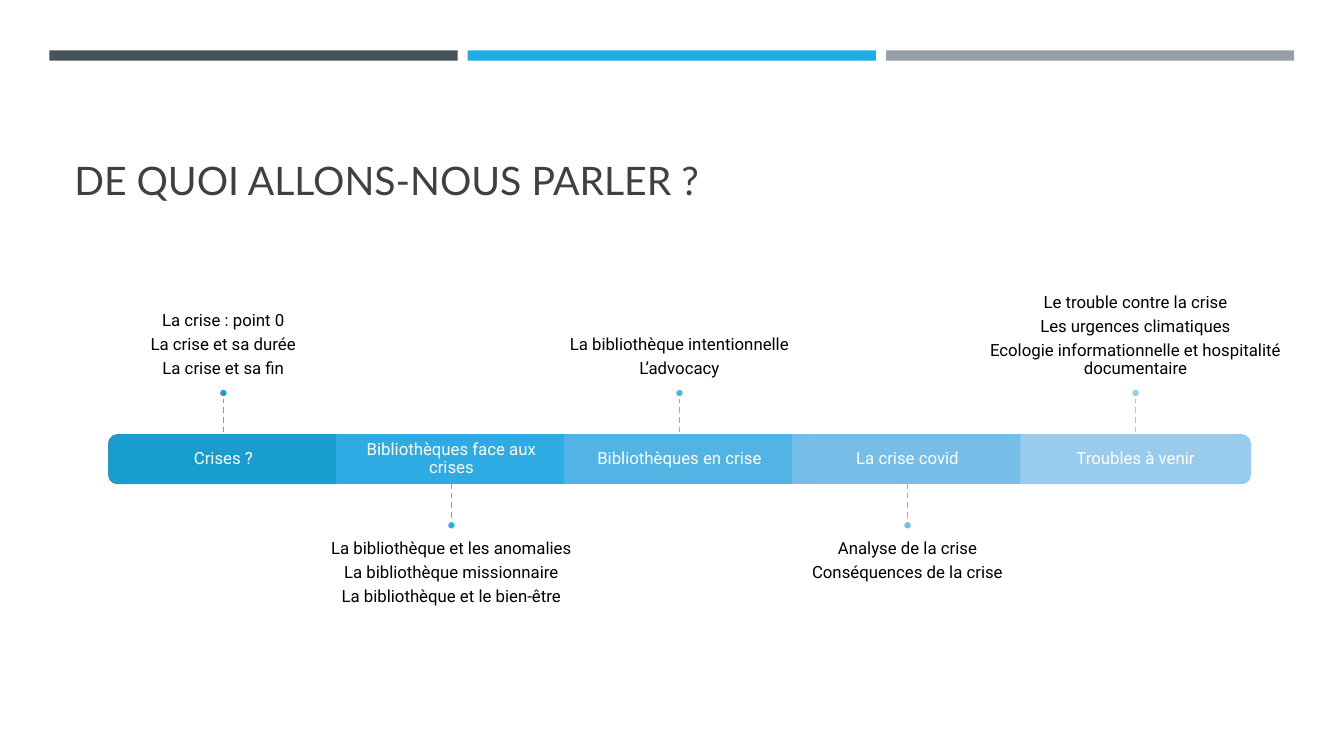
from dataclasses import dataclass

from lxml import etree
from pptx import Presentation
from pptx.dml.color import RGBColor
from pptx.enum.dml import MSO_LINE
from pptx.enum.shapes import MSO_CONNECTOR, MSO_SHAPE
from pptx.enum.text import MSO_ANCHOR, PP_ALIGN
from pptx.oxml.ns import qn
from pptx.util import Pt

RECT, OVAL = MSO_SHAPE.RECTANGLE, MSO_SHAPE.OVAL
ROUND_END = MSO_SHAPE.ROUND_2_SAME_RECTANGLE
STRAIGHT, DASH = MSO_CONNECTOR.STRAIGHT, MSO_LINE.DASH
TOP, MIDDLE, BOTTOM = MSO_ANCHOR.TOP, MSO_ANCHOR.MIDDLE, MSO_ANCHOR.BOTTOM
LEFT, CENTER = PP_ALIGN.LEFT, PP_ALIGN.CENTER


@dataclass(frozen=True)
class Theme:
    heading_font: str = "Lato"
    body_font: str = "Roboto"
    heading_size: float = 28
    body_size: float = 12
    heading: str = "404040"
    body: str = "000000"
    white: str = "FFFFFF"
    header_bars: tuple = ("465359", "1CADE4", "969FA7")
    segments: tuple = ("199DCF", "2DABE2", "52B3E5", "76BEE8", "99CBEC")
    stems: tuple = ("36B3E9", "48B8EC", "5ABEEF", "77BFE9", "98CBEC")


CHAPTERS = [
    ("Crises ?",
     ["La crise : point 0", "La crise et sa durée", "La crise et sa fin"]),
    ("Bibliothèques face aux crises",
     ["La bibliothèque et les anomalies", "La bibliothèque missionnaire",
      "La bibliothèque et le bien-être"]),
    ("Bibliothèques en crise",
     ["La bibliothèque intentionnelle", "L’advocacy"]),
    ("La crise covid",
     ["Analyse de la crise", "Conséquences de la crise"]),
    ("Troubles à venir",
     ["Le trouble contre la crise", "Les urgences climatiques",
      "Ecologie informationnelle et hospitalité documentaire"]),
]

BAR_LEFT, BAR_TOP, BAR_WIDTH, BAR_HEIGHT, BAR_STEP = 35.3, 36, 291.6, 7.4, 298.8
BAND_LEFT, BAND_TOP, BAND_HEIGHT, SEGMENT = 78.1, 311, 34, 162.9
STEM, DOT = 27, 6.5
TOPICS_WIDTH, TOPICS_HEIGHT = 271.4, 118
INSET = 7.2


class SlideBuilder:
    def __init__(self, slide, theme):
        self.shapes = slide.shapes
        self.theme = theme

    def block(self, kind, box, fill, outline=None, rotation=0):
        block = self.shapes.add_shape(kind, *map(Pt, box))
        block.shadow.inherit = False
        block.rotation = rotation
        block.fill.solid()
        block.fill.fore_color.rgb = RGBColor.from_string(fill)
        if outline:
            block.line.color.rgb = RGBColor.from_string(outline)
            block.line.width = Pt(1.75)
        else:
            block.line.fill.background()

    def stem(self, x, start, end, color):
        stem = self.shapes.add_connector(STRAIGHT, Pt(x), Pt(start), Pt(x), Pt(end))
        stem.line.color.rgb = RGBColor.from_string(color)
        stem.line.width = Pt(1)
        stem.line.dash_style = DASH
        properties = stem._element.find(qn("p:spPr"))
        etree.SubElement(properties, qn("a:effectLst"))

    def text(self, box, lines, color, anchor, insets, font=None, paragraph=None):
        """Insets run left, top, right, bottom; font and paragraph override body style."""
        frame = self.shapes.add_textbox(*map(Pt, box)).text_frame
        sides = ("margin_left", "margin_top", "margin_right", "margin_bottom")
        frame_format = {"word_wrap": True, "vertical_anchor": anchor,
                        **dict(zip(sides, map(Pt, insets)))}
        apply_format(frame, frame_format)
        frame.text = "\n".join(lines)
        font_format = {"name": self.theme.body_font, "size": Pt(self.theme.body_size),
                       **(font or {})}
        paragraph_format = {"alignment": CENTER, "line_spacing": 0.9,
                            "space_after": Pt(4.2), **(paragraph or {})}
        for line in frame.paragraphs:
            apply_format(line, paragraph_format)
            for run in line.runs:
                apply_format(run.font, font_format)
                run.font.color.rgb = RGBColor.from_string(color)

    def header(self, title):
        theme = self.theme
        for index, color in enumerate(theme.header_bars):
            self.block(RECT, (BAR_LEFT + index * BAR_STEP, BAR_TOP, BAR_WIDTH, BAR_HEIGHT), color)
        self.text((46, 55.4, 868.3, 93.6), [title], theme.heading, BOTTOM,
                  (INSET, 3.6, INSET, 3.6),
                  {"name": theme.heading_font, "size": Pt(theme.heading_size)},
                  {"alignment": LEFT, "line_spacing": 1.0, "space_after": Pt(0)})

    def segment(self, index, label):
        """Draw one piece of the band; the two end pieces are turned to round outwards."""
        color = self.theme.segments[index]
        left = BAND_LEFT + index * SEGMENT
        cell = (left, BAND_TOP, SEGMENT, BAND_HEIGHT)
        turn = {0: 270, len(CHAPTERS) - 1: 90}.get(index)
        if turn is None:
            self.block(RECT, cell, color, color)
        else:
            shift = (SEGMENT - BAND_HEIGHT) / 2
            upright = (left + shift, BAND_TOP - shift, BAND_HEIGHT, SEGMENT)
            self.block(ROUND_END, upright, color, color, turn)
        self.text(cell, [label], self.theme.white, MIDDLE, (INSET,) * 4)

    def topics(self, index, lines):
        """Place the topics above the band for even indexes and below it for odd ones."""
        theme = self.theme
        center = BAND_LEFT + (index + 0.5) * SEGMENT
        if index % 2 == 0:
            edge, tip = BAND_TOP, BAND_TOP - STEM
            dot_top = tip - DOT
            top, anchor, insets = dot_top - TOPICS_HEIGHT, BOTTOM, (0, 0, 0, INSET)
        else:
            edge = BAND_TOP + BAND_HEIGHT
            dot_top = tip = edge + STEM
            top, anchor, insets = dot_top + DOT, TOP, (0, INSET, 0, 0)
        self.text((center - TOPICS_WIDTH / 2, top, TOPICS_WIDTH, TOPICS_HEIGHT),
                  lines, theme.body, anchor, insets)
        self.stem(center, min(edge, tip), max(edge, tip), theme.stems[index])
        self.block(OVAL, (center - DOT / 2, dot_top, DOT, DOT),
                   theme.segments[index], theme.white)


def apply_format(target, values):
    for attribute, value in values.items():
        setattr(target, attribute, value)


def main():
    deck = Presentation()
    deck.slide_width, deck.slide_height = Pt(960), Pt(540)
    builder = SlideBuilder(deck.slides.add_slide(deck.slide_layouts[6]), Theme())
    builder.header("DE QUOI ALLONS-NOUS PARLER ?")
    for index, (label, lines) in enumerate(CHAPTERS):
        builder.segment(index, label)
        builder.topics(index, lines)
    deck.save("out.pptx")


if __name__ == "__main__":
    main()
